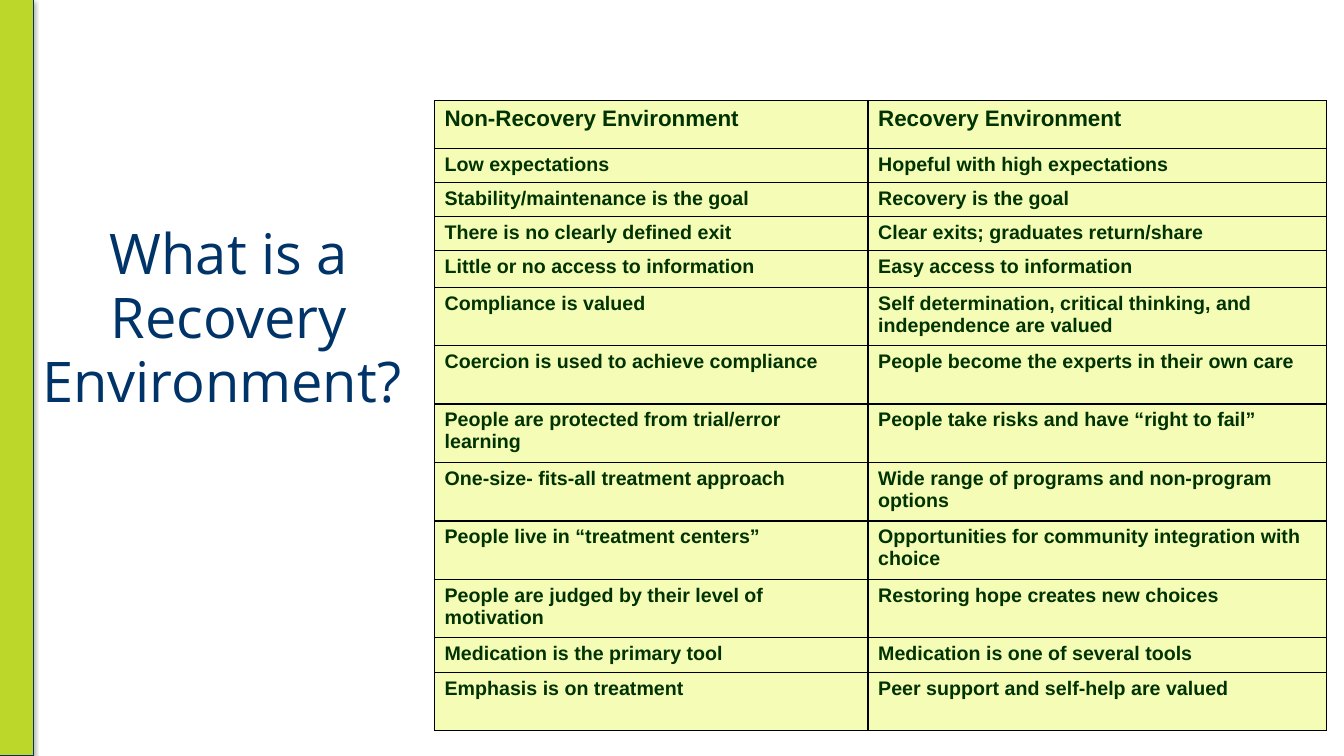
from dataclasses import dataclass
from typing import Any

from lxml.etree import SubElement
from pptx import Presentation
from pptx.dml.color import RGBColor
from pptx.enum.shapes import MSO_SHAPE
from pptx.enum.text import MSO_ANCHOR, MSO_AUTO_SIZE, PP_ALIGN
from pptx.oxml import parse_xml
from pptx.oxml.ns import nsdecls, qn
from pptx.util import Inches, Pt

COLORS = {
    "bar": "BCD62A",
    "bar_edge": "053066",
    "title": "003469",
    "cell": "F5FCB6",
    "cell_text": "003300",
    "border": "000000",
}
COLUMN_WIDTHS = (4.3, 4.55)
HEADER, SHORT, MEDIUM, TALL = 0.47, 0.34, 0.36, 0.58


@dataclass(frozen=True)
class Contrast:
    without: str
    with_recovery: str
    height: float
    size: int = 14


CONTRASTS = [
    Contrast("Non-Recovery Environment", "Recovery Environment", HEADER, 16),
    Contrast("Low expectations", "Hopeful with high expectations", SHORT),
    Contrast("Stability/maintenance is the goal", "Recovery is the goal", SHORT),
    Contrast("There is no clearly defined exit", "Clear exits; graduates return/share", SHORT),
    Contrast("Little or no access to information", "Easy access to information", MEDIUM),
    Contrast("Compliance is valued",
             "Self determination, critical thinking, and independence are valued", TALL),
    Contrast("Coercion is used to achieve compliance",
             "People become the experts in their own care", TALL),
    Contrast("People are protected from trial/error learning",
             "People take risks and have “right to fail”", TALL),
    Contrast("One-size- fits-all treatment approach",
             "Wide range of programs and non-program options", TALL),
    Contrast("People live in “treatment centers”",
             "Opportunities for community integration with choice", TALL),
    Contrast("People are judged by their level of motivation",
             "Restoring hope creates new choices", TALL),
    Contrast("Medication is the primary tool", "Medication is one of several tools", SHORT),
    Contrast("Emphasis is on treatment", "Peer support and self-help are valued", TALL),
]


def set_format(target: Any, values: dict[str, Any]) -> None:
    for name, value in values.items():
        setattr(target, name, value)


def color(name: str) -> RGBColor:
    return RGBColor.from_string(COLORS[name])


def draw_bar(page: Any, height: int) -> None:
    bar = page.shapes.add_shape(MSO_SHAPE.RECTANGLE, 0, 0, Inches(0.33), height)
    bar.fill.solid()
    bar.fill.fore_color.rgb = color("bar")
    bar.line.color.rgb = color("bar_edge")
    bar.line.width = Pt(0.75)
    # Soft shadow below the bar
    bar.shadow.inherit = False
    effects = bar._element.spPr.find(qn("a:effectLst"))
    effects.append(parse_xml(
        f'<a:outerShdw {nsdecls("a")} blurRad="{Pt(3.1)}" dist="{Pt(1.8)}" dir="5400000" '
        'rotWithShape="0"><a:srgbClr val="000000"><a:alpha val="35000"/></a:srgbClr>'
        '</a:outerShdw>'))


def write_title(page: Any) -> None:
    title = page.shapes.title
    set_format(title, {"left": Inches(0.23), "top": Inches(0.34),
                       "width": Inches(4.08), "height": Inches(5.62)})
    frame = title.text_frame
    frame.text = "What is a Recovery Environment? "
    set_format(frame, {"margin_left": 0, "margin_right": 0, "margin_top": 0,
                       "margin_bottom": 0, "word_wrap": True,
                       "auto_size": MSO_AUTO_SIZE.NONE,
                       "vertical_anchor": MSO_ANCHOR.MIDDLE})
    para = frame.paragraphs[0]
    set_format(para, {"alignment": PP_ALIGN.CENTER, "line_spacing": Pt(46)})
    span = para.runs[0]
    set_format(span.font, {"name": "Open Sans", "size": Pt(40)})
    span.font.color.rgb = color("title")


def add_borders(cell: Any) -> None:
    properties = cell._tc.get_or_add_tcPr()
    for position, side in enumerate(("lnL", "lnR", "lnT", "lnB")):
        line = parse_xml(
            f'<a:{side} {nsdecls("a")} w="{Pt(1)}"/>')
        fill = SubElement(line, qn("a:solidFill"))
        SubElement(fill, qn("a:srgbClr"), val=COLORS["border"])
        properties.insert(position, line)


def fill_cell(cell: Any, text: str, size: int) -> None:
    cell.text = text
    cell.fill.solid()
    cell.fill.fore_color.rgb = color("cell")
    add_borders(cell)
    font = cell.text_frame.paragraphs[0].runs[0].font
    set_format(font, {"name": "Arial", "size": Pt(size), "bold": True})
    font.color.rgb = color("cell_text")


def draw_table(page: Any) -> None:
    height = sum(contrast.height for contrast in CONTRASTS)
    table = page.shapes.add_table(
        len(CONTRASTS), len(COLUMN_WIDTHS), Inches(4.31), Inches(1),
        Inches(sum(COLUMN_WIDTHS)), Inches(height)).table
    set_format(table, {"first_row": False, "horz_banding": False})
    for column, width in zip(table.columns, COLUMN_WIDTHS):
        column.width = Inches(width)
    for row, contrast in zip(table.rows, CONTRASTS):
        row.height = Inches(contrast.height)
        for cell, text in zip(row.cells, (contrast.without, contrast.with_recovery)):
            fill_cell(cell, text, contrast.size)


def main() -> None:
    deck = Presentation()
    set_format(deck, {"slide_width": Inches(13.33), "slide_height": Inches(7.5)})
    page = deck.slides.add_slide(deck.slide_layouts[5])
    draw_bar(page, deck.slide_height)
    write_title(page)
    draw_table(page)
    deck.save("out.pptx")


if __name__ == "__main__":
    main()
